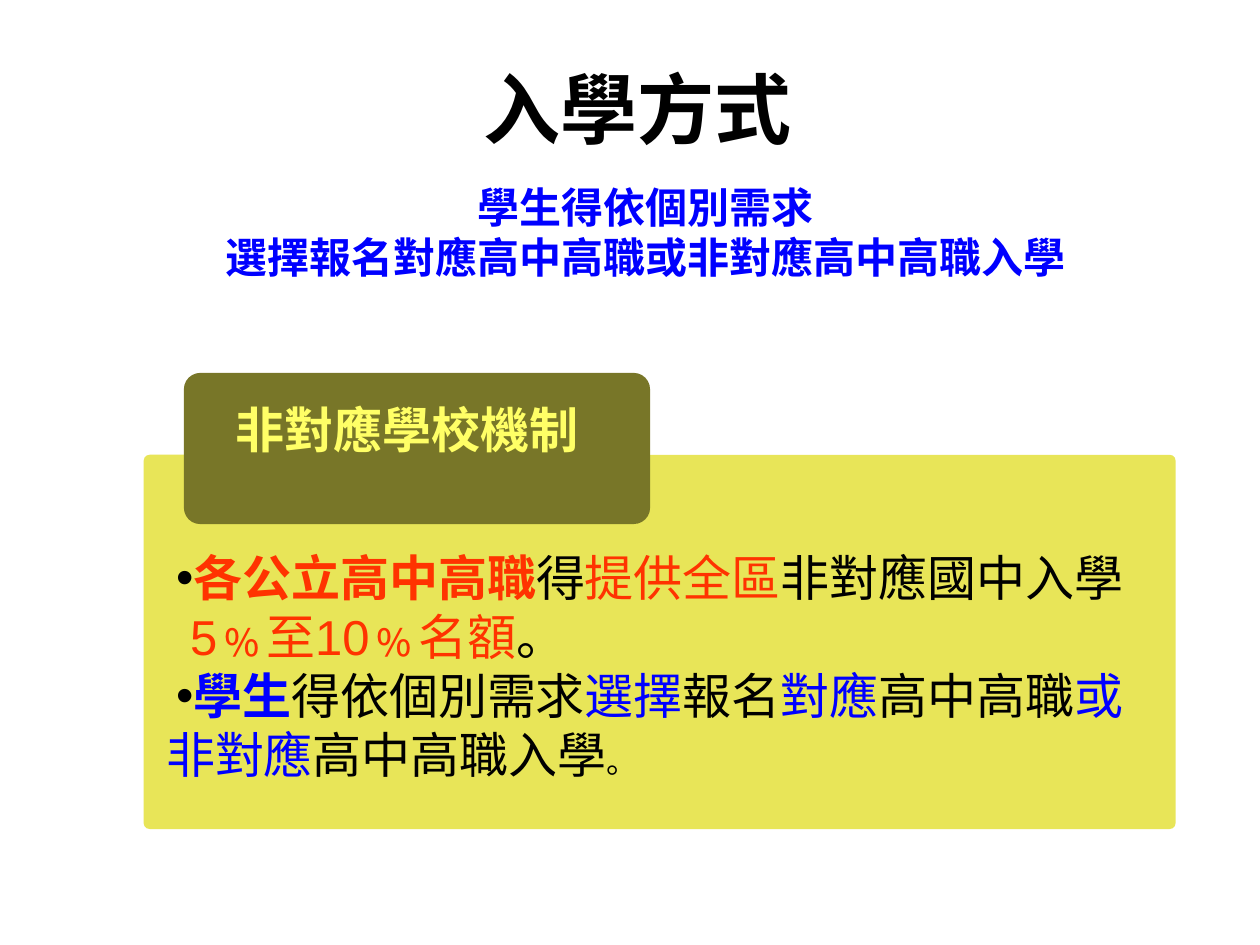
from dataclasses import dataclass

from lxml.etree import SubElement
from pptx import Presentation
from pptx.dml.color import RGBColor
from pptx.enum.shapes import MSO_SHAPE
from pptx.enum.text import MSO_ANCHOR, MSO_AUTO_SIZE, PP_ALIGN
from pptx.oxml.ns import qn
from pptx.util import Inches, Pt


@dataclass(frozen=True)
class Theme:
    font: str = "Arial"
    black: str = "000000"
    blue: str = "0000FF"
    red: str = "FF3300"
    panel: str = "E8E558"
    tab: str = "787628"
    tab_text: str = "FFFF66"
    title_size: int = 44
    subtitle_size: int = 24
    body_size: int = 28
    small_size: int = 18


@dataclass(frozen=True)
class Box:
    """A region in cells of a grid of 100 columns and 75 rows."""
    column: float
    row: float
    columns: float
    rows: float

    def inset(self, left, top, columns, rows):
        return Box(self.column + left, self.row + top, columns, rows)


THEME = Theme()
CELL = Inches(0.1)


def place(shape, box):
    shape.left, shape.top = round(box.column * CELL), round(box.row * CELL)
    shape.width, shape.height = round(box.columns * CELL), round(box.rows * CELL)


def add_run(paragraph, text, size, color, bold=False):
    run = paragraph.add_run()
    run.text = text
    run.font.name = THEME.font
    run.font.size = Pt(size)
    run.font.bold = bold
    run.font.color.rgb = RGBColor.from_string(color)


def add_text_box(slide, box):
    shape = slide.shapes.add_textbox(0, 0, 0, 0)
    place(shape, box)
    shape.text_frame.word_wrap = True
    return shape.text_frame


def add_round_box(slide, box, color, rounding):
    shape = slide.shapes.add_shape(MSO_SHAPE.ROUNDED_RECTANGLE, 0, 0, 0, 0)
    place(shape, box)
    shape.adjustments[0] = rounding
    shape.shadow.inherit = False
    shape.fill.solid()
    shape.fill.fore_color.rgb = RGBColor.from_string(color)
    shape.line.fill.background()


def indent_first_line(paragraph, inches, bullet=False):
    properties = paragraph._p.get_or_add_pPr()
    properties.set("marL", "0")
    properties.set("indent", str(Inches(inches)))
    if bullet:
        color = SubElement(properties, qn("a:buClr"))
        SubElement(color, qn("a:srgbClr"), val=THEME.black)
        SubElement(properties, qn("a:buSzPct"), val="101000")
        SubElement(properties, qn("a:buFont"), typeface=THEME.font)
        SubElement(properties, qn("a:buChar"), char="•")


def build_title(slide, box):
    title = slide.shapes.title
    place(title, box)
    frame = title.text_frame
    frame.auto_size = MSO_AUTO_SIZE.NONE
    frame.vertical_anchor = MSO_ANCHOR.MIDDLE
    paragraph = frame.paragraphs[0]
    paragraph.alignment = PP_ALIGN.LEFT
    add_run(paragraph, "入學方式", THEME.title_size, THEME.black, True)


def build_subtitle(slide, box):
    frame = add_text_box(slide, box)
    lines = ["學生得依個別需求", "選擇報名對應高中高職或非對應高中高職入學"]
    for index, line in enumerate(lines):
        paragraph = frame.add_paragraph() if index else frame.paragraphs[0]
        paragraph.alignment = PP_ALIGN.CENTER
        add_run(paragraph, line, THEME.subtitle_size, THEME.blue, True)


def build_mechanism(slide, box):
    # Panel with an overlapping heading tab
    add_round_box(slide, box, THEME.panel, 0.016)
    add_round_box(slide, box.inset(3.2, -6.5, 37, 12), THEME.tab, 0.108)
    heading = add_text_box(slide, box.inset(6.3, -4.9, 31.9, 5.7))
    add_run(heading.paragraphs[0], "非對應學校機制",
            THEME.body_size, THEME.tab_text, True)

    # Body: first-line indent, bullet, runs of text, colour and optional bold
    black, blue, red = THEME.black, THEME.blue, THEME.red
    points = [
        (0.08, True, [("各公立高中高職", red, True), ("得", black),
                      ("提供全區", red), ("非對應國中入學", black)]),
        (0.19, False, [("5﹪至10﹪名額", red), ("。", black)]),
        (0.08, True, [("學生", blue, True), ("得依個別需求", black),
                      ("選擇", blue), ("報名", black), ("對應", blue),
                      ("高中高職", black), ("或非對應", blue),
                      ("高中高職入學", black)]),
    ]
    frame = add_text_box(slide, box.inset(0.8, 6.9, 78.8, 19.7))
    for index, (indent, bullet, runs) in enumerate(points):
        paragraph = frame.add_paragraph() if index else frame.paragraphs[0]
        indent_first_line(paragraph, indent, bullet)
        for text, *style in runs:
            add_run(paragraph, text, THEME.body_size, *style)
    add_run(paragraph, "。", THEME.small_size, black)


def main():
    presentation = Presentation()
    presentation.slide_width = 100 * CELL
    presentation.slide_height = 75 * CELL
    slide = presentation.slides.add_slide(presentation.slide_layouts[5])
    build_title(slide, Box(37.4, 4.4, 29.5, 8.3))
    build_subtitle(slide, Box(16.9, 13.9, 68.7, 9))
    build_mechanism(slide, Box(11.4, 36.1, 81.9, 29.7))
    presentation.save("out.pptx")


if __name__ == "__main__":
    main()
